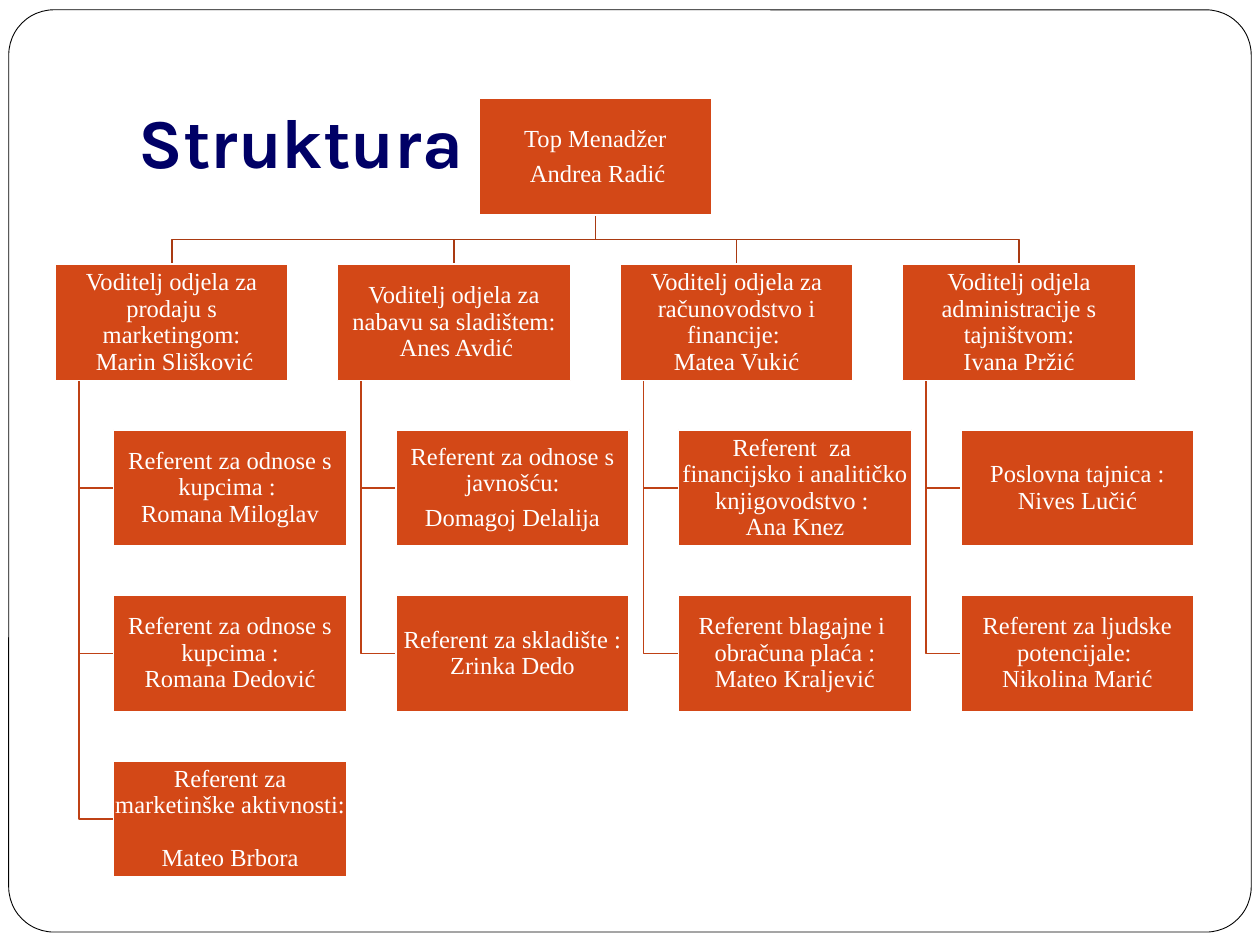
from pptx import Presentation
from pptx.dml.color import RGBColor
from pptx.enum.shapes import MSO_SHAPE
from pptx.enum.text import MSO_ANCHOR, MSO_AUTO_SIZE, PP_ALIGN
from pptx.util import Pt

TITLE = "Struktura :"
HEAD = "Top Menadžer", " Andrea Radić"
TEAMS = [
    ("Voditelj odjela za prodaju s marketingom:\n Marin Slišković", [
        ["Referent za odnose s kupcima : \nRomana Miloglav"],
        ["Referent za odnose s kupcima :\nRomana Dedović"],
        ["Referent za marketinške aktivnosti: \nMateo Brbora"]]),
    ("Voditelj odjela za nabavu sa sladištem:\n Anes Avdić", [
        ["Referent za odnose s javnošću:", "Domagoj Delalija"],
        ["Referent za skladište :\nZrinka Dedo"]]),
    ("Voditelj odjela za računovodstvo i financije: \nMatea Vukić", [
        ["Referent  za  financijsko i analitičko knjigovodstvo : \nAna Knez"],
        ["Referent blagajne i  obračuna plaća :\nMateo Kraljević"]]),
    ("Voditelj odjela administracije s tajništvom:\nIvana Pržić", [
        ["Poslovna tajnica :\nNives Lučić"],
        ["Referent za ljudske potencijale: \nNikolina Marić"]]),
]
LEFT, TOP = 31.5, 56.3
WIDE, HIGH = 133.2, 66.6
COL, ROW = 161.4, 94.6
STEM, INDENT = 13.5, 33.4


def color(code):
    """Turn a hex string into a colour."""
    return RGBColor.from_string(code)


def paint(shape, fill, line, width):
    """Give a shape a flat fill and an outline."""
    shape.shadow.inherit = False
    shape.fill.solid()
    shape.fill.fore_color.rgb = color(fill)
    shape.line.color.rgb = color(line)
    shape.line.width = Pt(width)


def add_box(slide, left, top, texts):
    """Add one position of the chart."""
    box = slide.shapes.add_shape(
        MSO_SHAPE.RECTANGLE, Pt(left), Pt(top), Pt(WIDE), Pt(HIGH))
    paint(box, "D34817", "FFFFFF", 1)
    frame = box.text_frame
    frame.word_wrap = True
    frame.vertical_anchor = MSO_ANCHOR.MIDDLE
    frame.margin_left = frame.margin_right = Pt(0.7)
    frame.margin_top = frame.margin_bottom = Pt(0.7)
    for i, text in enumerate(texts):
        para = frame.add_paragraph() if i else frame.paragraphs[0]
        para.text = text
        para.alignment = PP_ALIGN.CENTER
        para.line_spacing = 0.9
        para.space_after = Pt(4.9)
        para.font.size = Pt(14)
        para.font.name = "Times New Roman"
        para.font.color.rgb = color("FFFFFF")


def add_link(slide, points, code):
    """Add an open bent line through the points."""
    start, *rest = [(Pt(x), Pt(y)) for x, y in points]
    path = slide.shapes.build_freeform(*start)
    path.add_line_segments(rest, close=False)
    link = path.convert_to_shape()
    link.shadow.inherit = False
    link.fill.background()
    link.line.color.rgb = color(code)
    link.line.width = Pt(1)


def add_title(slide):
    """Format the title and lay the rounded frame behind it."""
    title = slide.shapes.title
    title.left, title.top = Pt(72), Pt(21.6)
    title.width, title.height = Pt(612), Pt(90)
    frame = title.text_frame
    frame.text = TITLE
    frame.word_wrap = True
    frame.auto_size = MSO_AUTO_SIZE.NONE
    frame.vertical_anchor = MSO_ANCHOR.BOTTOM
    frame.margin_left = frame.margin_right = frame.margin_bottom = Pt(7.2)
    frame.margin_top = Pt(3.6)
    para = frame.paragraphs[0]
    para.alignment = PP_ALIGN.LEFT
    para.font.name = "Karla"
    para.font.size = Pt(40)
    para.font.bold = True
    para.font.color.rgb = color("000066")
    edge = slide.shapes.add_shape(
        MSO_SHAPE.ROUNDED_RECTANGLE, Pt(5), Pt(5.6), Pt(710), Pt(527))
    edge.adjustments[0] = 0.049
    paint(edge, "FFFFFF", "000000", 0.5)
    title.element.addprevious(edge.element)


def main():
    """Build the slide and save it."""
    deck = Presentation()
    deck.slide_width, deck.slide_height = Pt(720), Pt(540)
    slide = deck.slides.add_slide(deck.slide_layouts[5])
    add_title(slide)

    root = LEFT + COL * (len(TEAMS) - 1) / 2
    mid = root + WIDE / 2
    lead = TOP + ROW
    bus = (TOP + HIGH + lead) / 2
    boxes = [(root, TOP, HEAD)]
    for i, (chief, staff) in enumerate(TEAMS):
        left = LEFT + i * COL
        goal = left + WIDE / 2
        add_link(slide, [(mid, TOP + HIGH), (mid, bus), (goal, bus),
                         (goal, lead)], "A93A12")
        boxes.append((left, lead, [chief]))
        for j, texts in enumerate(staff, 1):
            top = lead + j * ROW
            stem, side = left + STEM, left + INDENT
            add_link(slide, [(stem, lead + HIGH), (stem, top + HIGH / 2),
                             (side, top + HIGH / 2)], "BF4115")
            boxes.append((side, top, texts))
    for box in boxes:
        add_box(slide, *box)
    deck.save("out.pptx")


if __name__ == "__main__":
    main()
